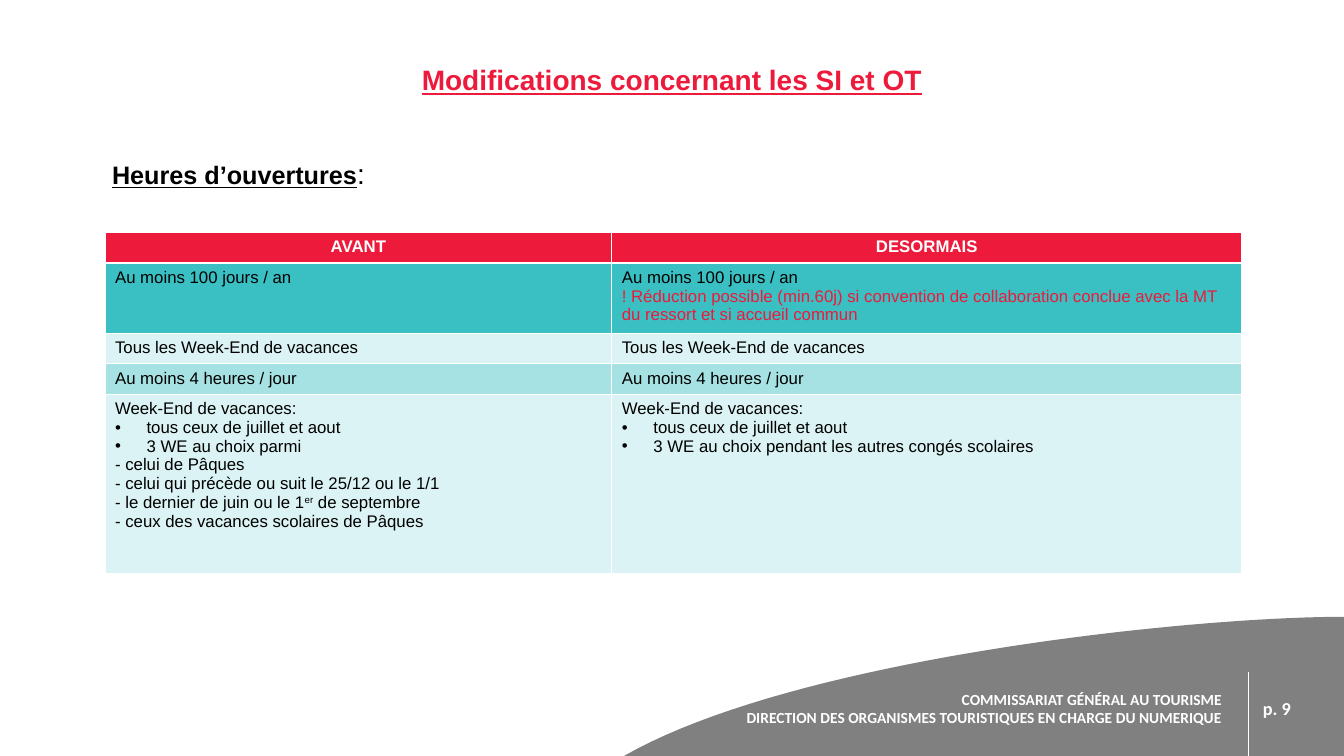
from dataclasses import dataclass

from lxml import etree
from pptx import Presentation
from pptx.dml.color import RGBColor
from pptx.enum.shapes import MSO_CONNECTOR
from pptx.enum.text import MSO_ANCHOR, PP_ALIGN
from pptx.oxml.ns import qn
from pptx.util import Pt

LEFT, CENTER, RIGHT = PP_ALIGN.LEFT, PP_ALIGN.CENTER, PP_ALIGN.RIGHT
MIDDLE = MSO_ANCHOR.MIDDLE
STRAIGHT = MSO_CONNECTOR.STRAIGHT


@dataclass(frozen=True)
class Theme:
    red: str = "ED1A3B"
    teal: str = "3ABFC2"
    mid_teal: str = "A6E2E3"
    pale_teal: str = "DBF3F4"
    grey: str = "808080"
    white: str = "FFFFFF"
    black: str = "000000"
    body_font: str = "Arial"
    footer_font: str = "Calibri"
    title_size: int = 20
    heading_size: int = 18
    table_size: int = 12
    footer_size: int = 11
    page_size: int = 13


T = Theme()

TITLE = "Modifications concernant les SI et OT"
HEADING = ("Heures d’ouvertures", ":")
FOOTER = ["COMMISSARIAT GÉNÉRAL AU TOURISME",
          "DIRECTION DES ORGANISMES TOURISTIQUES EN CHARGE DU NUMERIQUE"]
PAGE = ["p. 9"]

# Each cell is a list of (kind, runs); every second run is superscript.
HEADERS = ["AVANT", "DESORMAIS"]
WEEKENDS = [("plain", ["Week-End de vacances:"]),
            ("bullet", ["tous ceux de juillet et aout"])]
ROWS = [
    (T.teal, 47,
     [("plain", ["Au moins 100 jours / an"])],
     [("plain", ["Au moins 100 jours / an"]),
      ("alert", ["! Réduction possible (min.60j) si convention de collaboration "
                 "conclue avec la MT du ressort et si accueil commun"])]),
    (T.pale_teal, 21,
     [("plain", ["Tous les Week-End de vacances"])],
     [("plain", ["Tous les Week-End de vacances"])]),
    (T.mid_teal, 21,
     [("plain", ["Au moins 4 heures / jour"])],
     [("plain", ["Au moins 4 heures / jour"])]),
    (T.pale_teal, 128,
     WEEKENDS + [("bullet", ["3 WE au choix parmi"]),
                 ("plain", ["- celui de Pâques"]),
                 ("plain", ["- celui qui précède ou suit le 25/12 ou le 1/1"]),
                 ("plain", ["- le dernier de juin ou le 1", "er", " de septembre"]),
                 ("plain", ["- ceux des vacances scolaires de Pâques"])],
     WEEKENDS + [("bullet", ["3 WE au choix pendant les autres congés scolaires"])]),
]
HEADER_HEIGHT = 21
COLUMN_WIDTHS = (362, 450)
TABLE_LEFT, TABLE_TOP = 75, 166.2
WAVE = [(445.7, 540), (567.4, 470.2), (848.2, 440.6), (960, 440.6)]
WAVE_STEPS = 40


def style(font, size, color, bold=False, underline=False, name=T.body_font):
    font.name, font.size = name, Pt(size)
    font.bold, font.underline = bold, underline
    font.color.rgb = RGBColor.from_string(color)


def paint(fill, color):
    fill.solid()
    fill.fore_color.rgb = RGBColor.from_string(color)


def add_bullet(p, indent=22.5):
    pPr = p._p.get_or_add_pPr()
    pPr.set("marL", str(Pt(indent)))
    pPr.set("indent", str(-Pt(indent)))
    etree.SubElement(pPr, qn("a:buFont")).set("typeface", "Arial")
    etree.SubElement(pPr, qn("a:buChar")).set("char", "•")


def add_text(s, box, lines, size, align=LEFT, **look):
    tf = s.shapes.add_textbox(*map(Pt, box)).text_frame
    tf.word_wrap, tf.vertical_anchor = True, MIDDLE
    tf.text = "\n".join(lines)
    for p in tf.paragraphs:
        p.alignment = align
        for r in p.runs:
            style(r.font, size, **look)
    return tf


def fill_cell(cell, paragraphs, color):
    paint(cell.fill, color)
    tf = cell.text_frame
    for i, (kind, texts) in enumerate(paragraphs):
        p = tf.paragraphs[0] if i == 0 else tf.add_paragraph()
        if kind == "bullet":
            add_bullet(p)
        if kind == "header":
            p.alignment = CENTER
        ink = {"header": T.white, "alert": T.red}.get(kind, T.black)
        for j, text in enumerate(texts):
            r = p.add_run()
            r.text = text
            style(r.font, T.table_size, ink, bold=kind == "header")
            if j % 2:
                r._r.get_or_add_rPr().set("baseline", "30000")


def add_table(s):
    heights = [HEADER_HEIGHT] + [row[1] for row in ROWS]
    table = s.shapes.add_table(
        len(heights), len(COLUMN_WIDTHS), Pt(TABLE_LEFT), Pt(TABLE_TOP),
        Pt(sum(COLUMN_WIDTHS)), Pt(sum(heights))).table
    for column, width in zip(table.columns, COLUMN_WIDTHS):
        column.width = Pt(width)
    for row, height in zip(table.rows, heights):
        row.height = Pt(height)
    for c, header in enumerate(HEADERS):
        fill_cell(table.cell(0, c), [("header", [header])], T.red)
    for r, (color, _, *cells) in enumerate(ROWS, 1):
        for c, paragraphs in enumerate(cells):
            fill_cell(table.cell(r, c), paragraphs, color)


def wave_point(t):
    """Point of the cubic Bézier curve WAVE at parameter t."""
    weights = ((1 - t) ** 3, 3 * t * (1 - t) ** 2, 3 * t * t * (1 - t), t ** 3)
    return tuple(Pt(sum(w * pt[axis] for w, pt in zip(weights, WAVE)))
                 for axis in (0, 1))


def add_footer(s):
    curve = [wave_point(i / WAVE_STEPS) for i in range(WAVE_STEPS + 1)]
    builder = s.shapes.build_freeform(*curve[0])
    builder.add_line_segments(curve[1:] + [(Pt(960), Pt(540))], close=True)
    wave = builder.convert_to_shape()
    wave.shadow.inherit = False
    paint(wave.fill, T.grey)
    wave.line.fill.background()

    look = dict(color=T.white, bold=True, name=T.footer_font)
    add_text(s, (488, 480, 392, 52), FOOTER, T.footer_size, RIGHT, **look)
    add_text(s, (895, 480, 60, 52), PAGE, T.page_size, **look)

    rule = s.shapes.add_connector(STRAIGHT, Pt(891.5), Pt(480), Pt(891.5), Pt(540))
    rule.line.color.rgb = RGBColor.from_string(T.white)
    rule.line.width = Pt(0.5)
    etree.SubElement(rule._element.spPr, qn("a:effectLst"))


def add_headings(s):
    title = s.shapes.title
    title.left, title.top, title.width, title.height = map(Pt, (73, 37, 814, 40))
    tf = title.text_frame
    tf.text, tf.vertical_anchor = TITLE, MIDDLE
    p = tf.paragraphs[0]
    p.alignment = CENTER
    style(p.runs[0].font, T.title_size, T.red, bold=True, underline=True)

    label, colon = HEADING
    tf = add_text(s, (73, 104, 814, 40), [label], T.heading_size,
                  color=T.black, bold=True, underline=True)
    r = tf.paragraphs[0].add_run()
    r.text = colon
    style(r.font, T.title_size, T.black)


def main():
    prs = Presentation()
    prs.slide_width, prs.slide_height = Pt(960), Pt(540)
    s = prs.slides.add_slide(prs.slide_layouts.get_by_name("Title Only"))
    add_footer(s)
    add_headings(s)
    add_table(s)
    prs.save("out.pptx")


if __name__ == "__main__":
    main()
